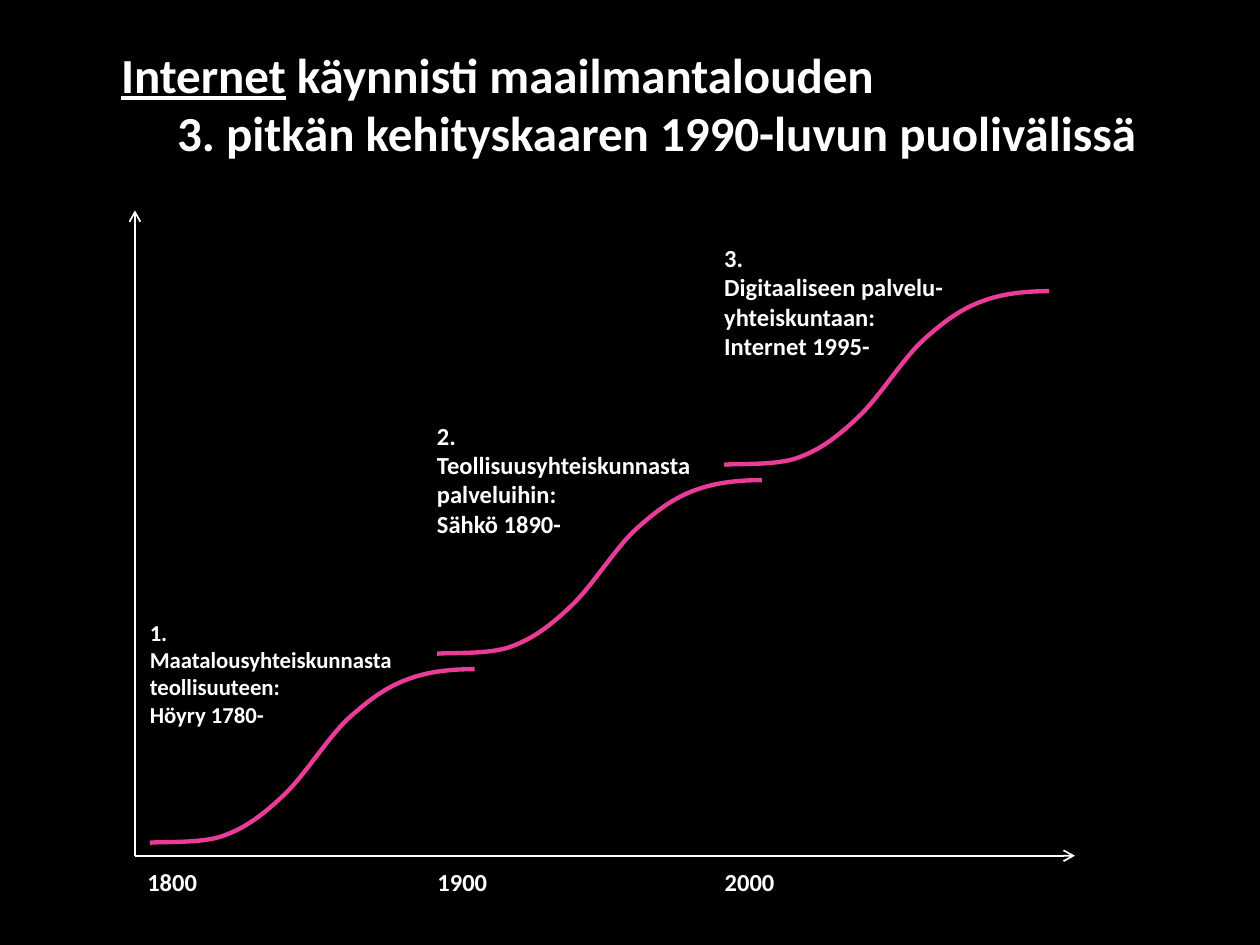
import pptx
import pptx.dml.color
import pptx.enum.shapes
import pptx.enum.text
import pptx.oxml.ns
import pptx.oxml.xmlchemy
import pptx.util

Cm = pptx.util.Cm
Pt = pptx.util.Pt
qn = pptx.oxml.ns.qn
new_element = pptx.oxml.xmlchemy.OxmlElement
BLACK = pptx.dml.color.RGBColor(0x00, 0x00, 0x00)
WHITE = pptx.dml.color.RGBColor(0xFF, 0xFF, 0xFF)
PINK = pptx.dml.color.RGBColor(0xE8, 0x3C, 0x98)
FONT = "Calibri"

# Each wave starts one step right of and above the one before it (cm).
WAVE_LEFT, WAVE_BASE = 3.02, 16.99
STEP_RIGHT, STEP_UP = 5.79, 3.81
YEAR_TOP = 17.48
# Bezier points relative to the start of a wave, three to a curve (cm).
WAVE_POINTS = [
    (0.25, -0.03), (1.04, 0.02), (1.48, -0.14),
    (1.93, -0.3), (2.28, -0.56), (2.7, -0.96),
    (3.12, -1.35), (3.6, -2.14), (4.02, -2.52),
    (4.44, -2.9), (4.79, -3.15), (5.21, -3.3),
    (5.64, -3.46), (6.1, -3.5), (6.55, -3.5),
]
# Year, left of year, top of label, label size, label lines
WAVES = [
    ("1800", 2.97, 12.47, 13,
     ["1.", "Maatalousyhteiskunnasta", "teollisuuteen:", "Höyry 1780-"]),
    ("1900", 8.82, 8.48, 14,
     ["2.", "Teollisuusyhteiskunnasta", "palveluihin:", "Sähkö 1890-"]),
    ("2000", 14.61, 4.9, 14,
     ["3.", "Digitaaliseen palvelu-", "yhteiskuntaan:", "Internet 1995-"]),
]
AXIS_LEFT, AXIS_BASE, AXIS_RIGHT, AXIS_TOP = 2.72, 17.25, 21.67, 4.24


def add_run(para, text, size, underline=False):
    run = para.add_run()
    run.text = text
    run.font.name = FONT
    run.font.size = Pt(size)
    run.font.bold = True
    run.font.underline = underline
    run.font.color.rgb = WHITE


def set_margins(frame, left, top, right, bottom):
    frame.margin_left, frame.margin_top = Cm(left), Cm(top)
    frame.margin_right, frame.margin_bottom = Cm(right), Cm(bottom)


def format_title(slide):
    """Fill the title; a hanging indent sets its second line inwards."""
    title = slide.shapes.title
    title.left, title.top = Cm(2.34), Cm(0.76)
    title.width, title.height = Cm(21.59), Cm(2.64)
    frame = title.text_frame
    frame.word_wrap = True
    frame.auto_size = pptx.enum.text.MSO_AUTO_SIZE.NONE
    frame.vertical_anchor = pptx.enum.text.MSO_ANCHOR.TOP
    set_margins(frame, 0.1, 0.13, 0.25, 0.13)
    para = frame.paragraphs[0]
    para.alignment = pptx.enum.text.PP_ALIGN.LEFT
    properties = para._p.get_or_add_pPr()
    properties.set("marL", str(Cm(1.13)))
    properties.set("indent", str(-Cm(1.13)))
    add_run(para, "Internet", 28, underline=True)
    add_run(para, " käynnisti maailmantalouden", 28)
    para.add_line_break()
    add_run(para, "3. pitkän kehityskaaren 1990-luvun puolivälissä", 28)


def add_text(slide, left, top, width, size, lines):
    height = len(lines) * 0.6
    box = slide.shapes.add_textbox(Cm(left), Cm(top), Cm(width), Cm(height))
    frame = box.text_frame
    frame.word_wrap = True
    set_margins(frame, 0, 0, 0, 0)
    for index, line in enumerate(lines):
        para = frame.add_paragraph() if index else frame.paragraphs[0]
        add_run(para, line, size)


def add_wave(slide, left, base):
    points = [(Cm(left + x), Cm(base + y)) for x, y in WAVE_POINTS]
    builder = slide.shapes.build_freeform(Cm(left), Cm(base))
    builder.add_line_segments(points, close=False)
    wave = builder.convert_to_shape()
    wave.shadow.inherit = False
    wave.fill.background()
    wave.line.color.rgb = PINK
    wave.line.width = Pt(2.5)
    bend_segments(wave)


def bend_segments(shape):
    """Turn every three line segments into one cubic Bezier curve."""
    outline = next(shape._element.iter(qn("a:path")))
    segments = outline.findall(qn("a:lnTo"))
    for first in range(0, len(segments), 3):
        curve = new_element("a:cubicBezTo")
        for segment in segments[first:first + 3]:
            curve.append(segment[0])
            outline.remove(segment)
        outline.append(curve)


def add_axis(slide, end_x, end_y):
    axis = slide.shapes.add_connector(
        pptx.enum.shapes.MSO_CONNECTOR.STRAIGHT,
        Cm(AXIS_LEFT), Cm(AXIS_BASE), Cm(end_x), Cm(end_y))
    axis.line.color.rgb = WHITE
    axis.line.width = Pt(1)
    arrow = new_element("a:tailEnd")
    arrow.set("type", "arrow")
    axis.line._get_or_add_ln().append(arrow)
    axis._element.spPr.append(new_element("a:effectLst"))


def main():
    deck = pptx.Presentation()
    deck.slide_width, deck.slide_height = Cm(25.4), Cm(19.05)
    slide = deck.slides.add_slide(deck.slide_layouts[5])
    slide.background.fill.solid()
    slide.background.fill.fore_color.rgb = BLACK
    format_title(slide)
    add_axis(slide, AXIS_RIGHT, AXIS_BASE)
    add_axis(slide, AXIS_LEFT, AXIS_TOP)
    for index, (year, year_left, label_top, size, lines) in enumerate(WAVES):
        left = WAVE_LEFT + index * STEP_RIGHT
        add_wave(slide, left, WAVE_BASE - index * STEP_UP)
        add_text(slide, left, label_top, 7.32, size, lines)
        add_text(slide, year_left, YEAR_TOP, 1.37, 14, [year])
    deck.save("out.pptx")


if __name__ == "__main__":
    main()
